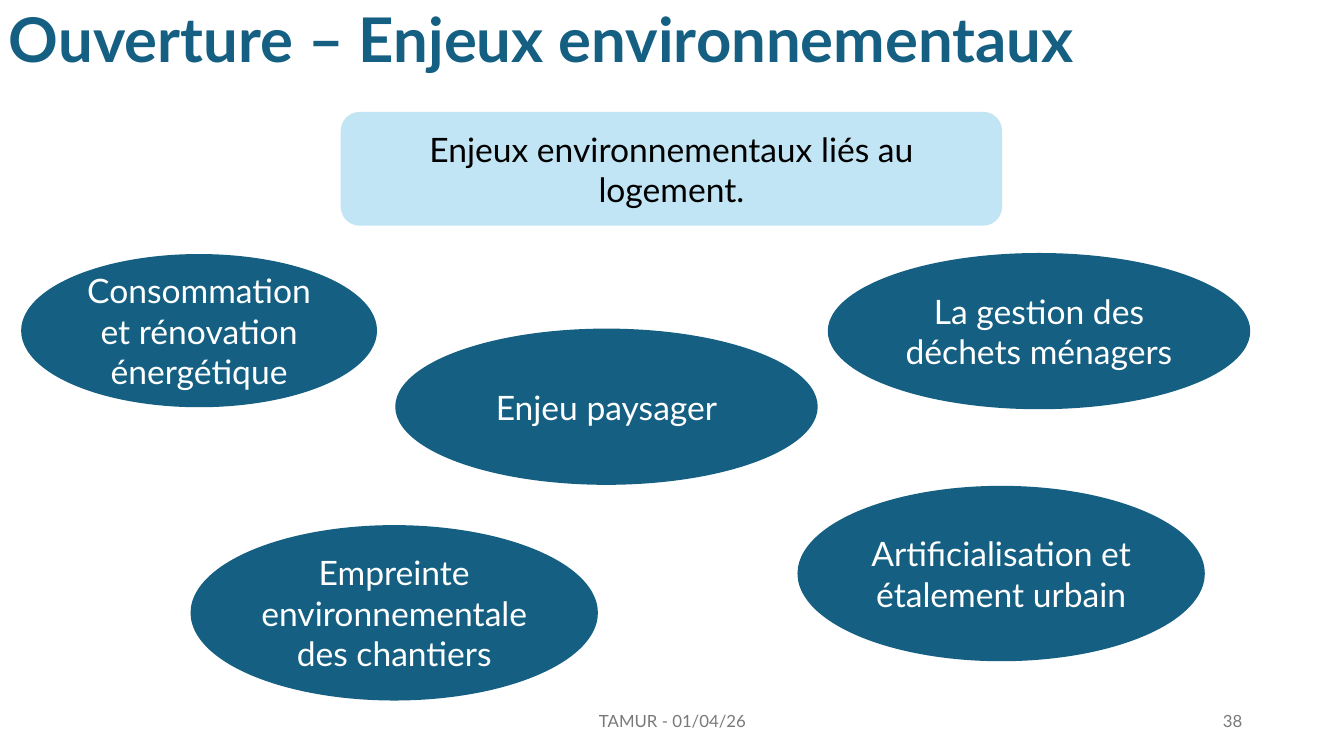
from pptx import Presentation
from pptx.dml.color import RGBColor
from pptx.enum.shapes import MSO_SHAPE
from pptx.enum.text import MSO_ANCHOR, PP_ALIGN
from pptx.util import Inches, Pt

LEFT, CENTER, RIGHT = PP_ALIGN.LEFT, PP_ALIGN.CENTER, PP_ALIGN.RIGHT
MIDDLE = MSO_ANCHOR.MIDDLE
ELLIPSE, ROUNDED = MSO_SHAPE.OVAL, MSO_SHAPE.ROUNDED_RECTANGLE

FONT = "Lato"
BLUE, PALE_BLUE = "156082", "C1E5F5"
WHITE, BLACK, GREY = "FFFFFF", "000000", "797979"

ISSUES = [
    ("Consommation et rénovation énergétique", (0.21, 2.52, 3.53, 1.52)),
    ("La gestion des déchets ménagers", (8.21, 2.51, 4.19, 1.55)),
    ("Empreinte environnementale des chantiers", (1.89, 5.21, 4.04, 1.74)),
    ("Artificialisation et étalement urbain", (7.91, 4.82, 4.04, 1.74)),
    ("Enjeu paysager", (3.92, 3.26, 4.19, 1.55)),
]


def color(value):
    return RGBColor.from_string(value)


def write(holder, text, size, ink, align, bold=False):
    frame = holder.text_frame
    frame.word_wrap = True
    frame.vertical_anchor = MIDDLE
    frame.text = text
    paragraph = frame.paragraphs[0]
    paragraph.alignment = align
    font = paragraph.runs[0].font
    font.name = FONT
    font.size = Pt(size)
    font.bold = bold
    font.color.rgb = color(ink)
    return paragraph


def add_label(slide, text, box, size, ink, align, bold=False):
    label = slide.shapes.add_textbox(*map(Inches, box))
    return write(label, text, size, ink, align, bold)


def add_bubble(slide, outline, text, box, fill, ink):
    bubble = slide.shapes.add_shape(outline, *map(Inches, box))
    bubble.shadow.inherit = False
    bubble.fill.solid()
    bubble.fill.fore_color.rgb = color(fill)
    bubble.line.fill.background()
    write(bubble, text, 24, ink, CENTER)


def main():
    deck = Presentation()
    deck.slide_width, deck.slide_height = Inches(13.33), Inches(7.5)
    slide = deck.slides.add_slide(deck.slide_layouts[6])

    title = add_label(slide, "Ouverture – Enjeux environnementaux",
                      (-0.01, 0, 13.32, 0.85), 44, BLUE, LEFT, bold=True)
    title.line_spacing = 0.9

    add_bubble(slide, ROUNDED, "Enjeux environnementaux liés au logement.",
               (3.38, 1.11, 6.56, 1.13), PALE_BLUE, BLACK)
    for issue, box in ISSUES:
        add_bubble(slide, ELLIPSE, issue, box, BLUE, WHITE)

    add_label(slide, "TAMUR - 01/04/26", (4.42, 6.95, 4.5, 0.4), 12, GREY, CENTER)
    add_label(slide, "38", (9.42, 6.95, 3, 0.4), 12, GREY, RIGHT)
    deck.save("out.pptx")


if __name__ == "__main__":
    main()
